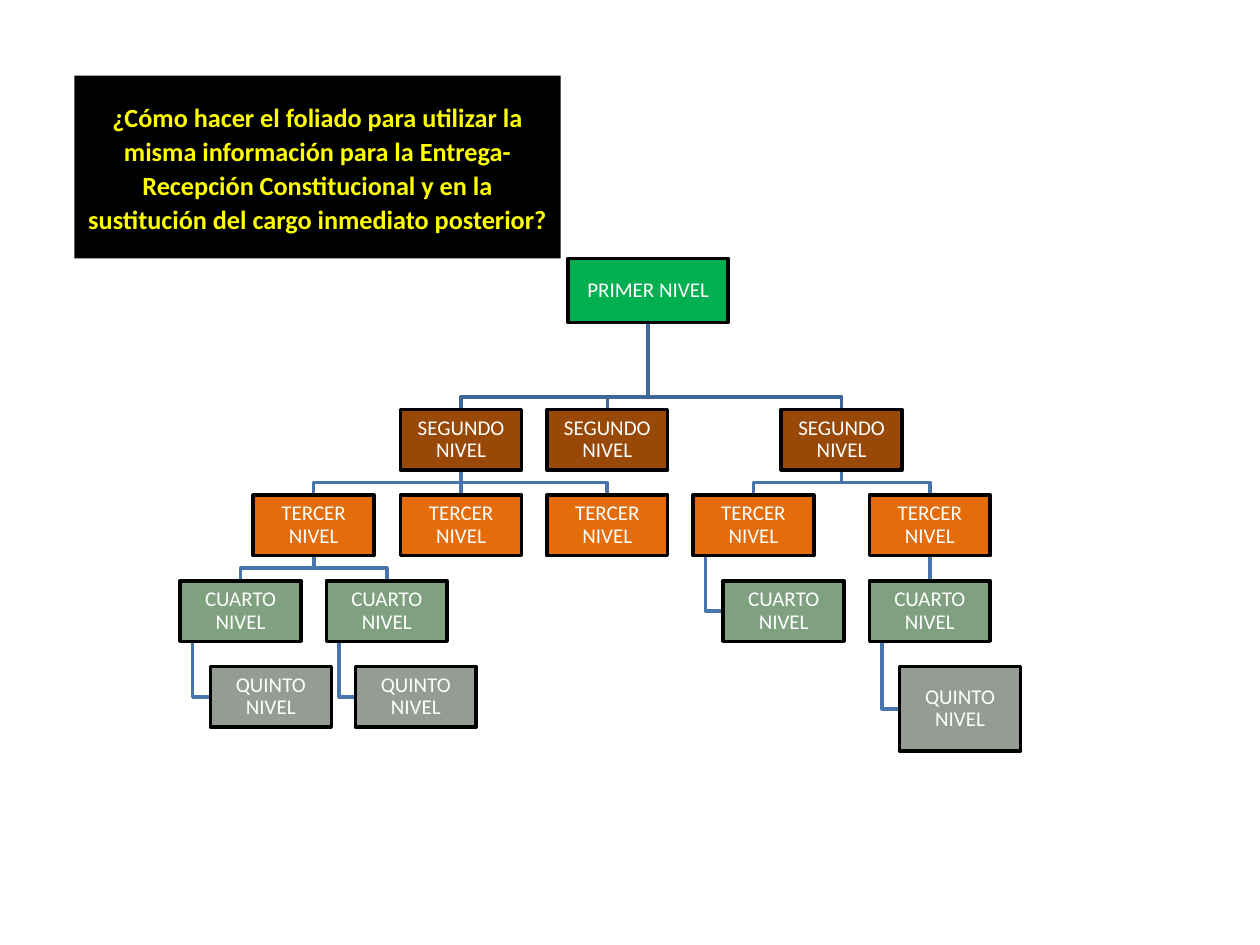
from pptx import Presentation
from pptx.dml.color import RGBColor
from pptx.enum import shapes, text
from pptx.oxml import parse_xml
from pptx.oxml.ns import nsdecls
from pptx.util import Inches, Pt

TITLE = ("¿Cómo hacer el foliado para utilizar la misma información para la "
         "Entrega-Recepción Constitucional y en la sustitución del cargo "
         "inmediato posterior?")
LEVELS = [
    ("PRIMER NIVEL", "00B050"),
    ("SEGUNDO NIVEL", "984807"),
    ("TERCER NIVEL", "E46C0A"),
    ("CUARTO NIVEL", "7FA180"),
    ("QUINTO NIVEL", "949C94"),
]
ROW_TOPS = [2.05, 3.25, 3.93, 4.61, 5.29]
BOX_SIZE = (0.96, 0.48)
ROOT_SIZE = (1.27, 0.51)
TALL_SIZE = (0.96, 0.67)
BRANCH_GAP = 0.1

NODES = {
    "root": dict(level=0, left=4.51, size=ROOT_SIZE),
    "second_a": dict(level=1, left=3.18, parent="root"),
    "second_b": dict(level=1, left=4.34, parent="root"),
    "second_c": dict(level=1, left=6.2, parent="root"),
    "third_a": dict(level=2, left=2.01, parent="second_a"),
    "third_b": dict(level=2, left=3.18, parent="second_a"),
    "third_c": dict(level=2, left=4.34, parent="second_a"),
    "third_d": dict(level=2, left=5.5, parent="second_c"),
    "third_e": dict(level=2, left=6.9, parent="second_c"),
    "fourth_a": dict(level=3, left=1.43, parent="third_a"),
    "fourth_b": dict(level=3, left=2.59, parent="third_a"),
    "fourth_c": dict(level=3, left=5.74, parent="third_d", hanging=True),
    "fourth_d": dict(level=3, left=6.9, parent="third_e"),
    "fifth_a": dict(level=4, left=1.67, parent="fourth_a", hanging=True),
    "fifth_b": dict(level=4, left=2.82, parent="fourth_b", hanging=True),
    "fifth_c": dict(level=4, left=7.14, parent="fourth_d", hanging=True, size=TALL_SIZE),
}


def color(value):
    return RGBColor.from_string(value)


def write(shape, content, size, font_color, bold=False, line_spacing=1.0, after=0, inset=0.01):
    frame = shape.text_frame
    frame.word_wrap = True
    frame.vertical_anchor = text.MSO_ANCHOR.MIDDLE
    frame.margin_left = frame.margin_right = Inches(inset)
    frame.margin_top = frame.margin_bottom = Inches(min(inset, 0.05))
    frame.text = content
    paragraph = frame.paragraphs[0]
    paragraph.alignment = text.PP_ALIGN.CENTER
    paragraph.line_spacing = line_spacing
    paragraph.space_before = Pt(0)
    paragraph.space_after = Pt(after)
    font = paragraph.runs[0].font
    font.name = "Calibri"
    font.size = Pt(size)
    font.bold = bold
    font.color.rgb = color(font_color)


def bounds(node):
    width, height = node.get("size", BOX_SIZE)
    return node["left"], ROW_TOPS[node["level"]], width, height


def branch_points(parent, child):
    parent_left, parent_top, parent_width, parent_height = bounds(parent)
    left, top, width, height = bounds(child)
    bottom = parent_top + parent_height
    if child.get("hanging"):
        trunk = parent_left + BRANCH_GAP
        middle = top + height / 2
        return [(trunk, bottom), (trunk, middle), (left, middle)]
    start, end = parent_left + parent_width / 2, left + width / 2
    if abs(start - end) < 0.01:
        return [(start, bottom), (end, top)]
    turn = top - BRANCH_GAP
    return [(start, bottom), (start, turn), (end, turn), (end, top)]


def draw_branch(slide, points, line_color):
    points = [(Inches(x), Inches(y)) for x, y in points]
    if len(points) == 2:
        branch = slide.shapes.add_connector(
            shapes.MSO_CONNECTOR.STRAIGHT, *points[0], *points[1])
        branch._element.spPr.append(parse_xml(f"<a:effectLst {nsdecls('a')}/>"))
    else:
        builder = slide.shapes.build_freeform(*points[0])
        builder.add_line_segments(points[1:], close=False)
        branch = builder.convert_to_shape()
        branch.fill.background()
        branch.shadow.inherit = False
    branch.line.color.rgb = color(line_color)
    branch.line.width = Pt(2)


def draw_box(slide, node):
    label, fill_color = LEVELS[node["level"]]
    box = slide.shapes.add_shape(
        shapes.MSO_SHAPE.RECTANGLE, *[Inches(value) for value in bounds(node)])
    box.shadow.inherit = False
    box.fill.solid()
    box.fill.fore_color.rgb = color(fill_color)
    box.line.color.rgb = color("000000")
    box.line.width = Pt(2)
    write(box, label, 12, "FFFFFF", line_spacing=0.9)


def main():
    presentation = Presentation()
    presentation.slide_width, presentation.slide_height = Inches(10), Inches(7.5)
    slide = presentation.slides.add_slide(presentation.slide_layouts[5])

    title = slide.shapes.title
    title.left, title.top = Inches(0.59), Inches(0.6)
    title.width, title.height = Inches(3.86), Inches(1.45)
    title.fill.solid()
    title.fill.fore_color.rgb = color("000000")
    write(title, TITLE, 15, "FFFF00", bold=True, line_spacing=1.07, after=6, inset=0.1)
    title.text_frame.auto_size = text.MSO_AUTO_SIZE.NONE

    for node in NODES.values():
        if "parent" in node:
            line_color = "3F6797" if node["level"] == 1 else "4875AC"
            draw_branch(slide, branch_points(NODES[node["parent"]], node), line_color)
    for node in NODES.values():
        draw_box(slide, node)

    presentation.save("out.pptx")


if __name__ == "__main__":
    main()
